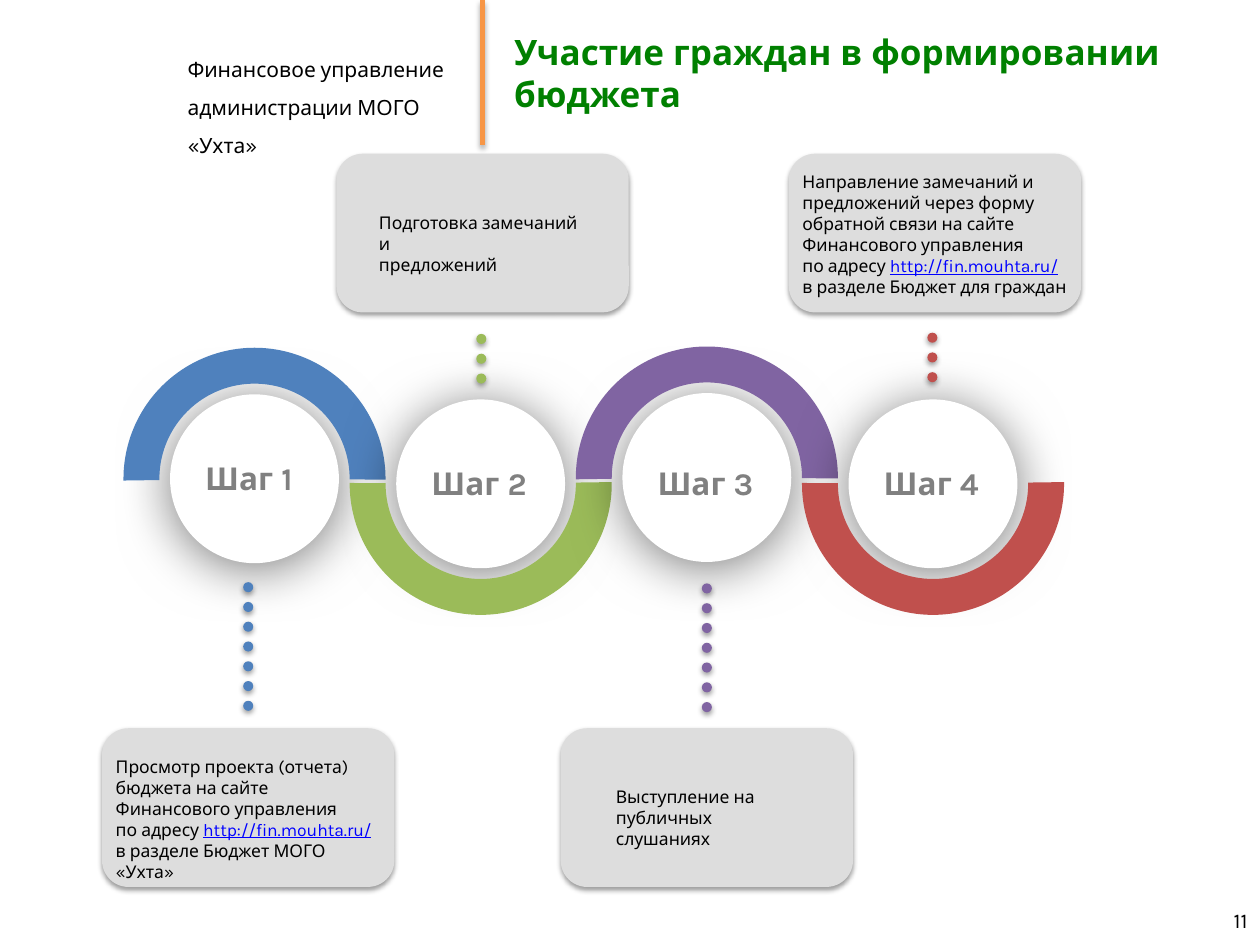
from lxml.etree import SubElement
from pptx import Presentation
from pptx.dml.color import RGBColor
from pptx.enum.shapes import MSO_CONNECTOR, MSO_SHAPE
from pptx.enum.text import MSO_ANCHOR, MSO_AUTO_SIZE, PP_ALIGN
from pptx.oxml.ns import qn
from pptx.util import Inches, Pt

FONT = "Karla"
HUES = {
    "text": "000000", "title": "008000", "link": "0000FF", "label": "808080",
    "card": "DDDDDD", "disc": "FFFFFF", "rule": "F79646",
    "blue": "4F81BD", "green": "9BBB59", "purple": "8064A2", "red": "C0504D",
}
LEFT, PITCH = 0.98, 1.795      # first column and column width of the steps
ARC, DISC, DOT, GAP = 2.08, 1.34, 0.08, 0.157
CARD = (2.32, 1.26)
URL = "http://fin.mouhta.ru/"

# hue, arc top, dots (left, top, count), card (left, top), text box, lines
STEPS = [
    ("blue", 2.76, (1.93, 4.62, 7), (0.81, 5.78), (0.82, 5.95, 2.31, 0.94),
     ["Просмотр проекта (отчета)", "бюджета на сайте",
      "Финансового управления", ("по адресу ", URL, " "),
      "в разделе Бюджет МОГО «Ухта»"]),
    ("green", 2.8, (3.78, 2.65, 3), (2.67, 1.22), (2.91, 1.63, 1.84, 0.44),
     ["Подготовка замечаний и", "предложений"]),
    ("purple", 2.75, (5.57, 4.63, 7), (4.45, 5.78), (4.79, 6.19, 1.64, 0.44),
     ["Выступление на", "публичных слушаниях"]),
    ("red", 2.8, (7.36, 2.64, 3), (6.26, 1.22), (6.27, 1.31, 2.3, 1.11),
     ["Направление замечаний и", "предложений через форму",
      "обратной связи на сайте", "Финансового управления",
      ("по адресу ", URL, " "), "в разделе Бюджет для граждан"]),
]


def color(name):
    return RGBColor.from_string(HUES[name])


def shade(shape, alpha, blur, dist):
    """Give the shape a soft black shadow that falls straight down."""
    props = shape._element.spPr
    list_ = props.find(qn("a:effectLst"))
    if list_ is None:
        list_ = SubElement(props, qn("a:effectLst"))
    outer = SubElement(list_, qn("a:outerShdw"), blurRad=str(Pt(blur)),
                       dist=str(Pt(dist)), dir="5400000", rotWithShape="0")
    tone = SubElement(outer, qn("a:srgbClr"), val="000000")
    SubElement(tone, qn("a:alpha"), val=str(alpha * 1000))


def add_form(slide, kind, box, hue, shadow=None):
    form = slide.shapes.add_shape(kind, *map(Inches, box))
    form.fill.solid()
    form.fill.fore_color.rgb = color(hue)
    form.line.fill.background()
    form.shadow.inherit = False
    if shadow:
        shade(form, *shadow)
    return form


def write(frame, lines, size, hue="text", bold=False, align=PP_ALIGN.LEFT,
          space=None):
    """Fill the frame; a line is a string or a tuple of runs."""
    frame.word_wrap = True
    for i, line in enumerate(lines):
        para = frame.add_paragraph() if i else frame.paragraphs[0]
        para.alignment = align
        if space:
            para.line_spacing = space
        for part in (line,) if isinstance(line, str) else line:
            run = para.add_run()
            run.text = part
            font = run.font
            font.name, font.size, font.bold = FONT, Pt(size), bold
            font.underline = part == URL
            font.color.rgb = color("link" if part == URL else hue)


def add_text(slide, box, lines, size, **style):
    frame = slide.shapes.add_textbox(*map(Inches, box)).text_frame
    write(frame, lines, size, **style)
    return frame


def add_head(slide):
    add_text(slide, (1.39, 0.3, 2.5, 0.66),
             ["Финансовое управление", "администрации МОГО «Ухта»"], 12,
             space=1.5)
    rule = slide.shapes.add_connector(
        MSO_CONNECTOR.STRAIGHT, Inches(3.83), 0, Inches(3.83), Inches(1.15))
    rule.line.color.rgb = color("rule")
    rule.line.width = Pt(3)
    shade(rule, 35, 3.1, 1.8)

    title = slide.shapes.title
    title.left, title.top = Inches(3.98), 0
    title.width, title.height = Inches(6.02), Inches(1.15)
    frame = title.text_frame
    frame.auto_size = MSO_AUTO_SIZE.NONE
    frame.vertical_anchor = MSO_ANCHOR.MIDDLE
    write(frame, ["Участие граждан в формировании бюджета"], 20,
          hue="title", bold=True)


def add_step(slide, col, hue, top, dots, card, box, lines):
    left = LEFT + col * PITCH
    inset = (ARC - DISC) / 2
    soft = (38, 3.1, 1.6)
    add_form(slide, MSO_SHAPE.OVAL, (left + inset, top + inset, DISC, DISC),
             "disc", (52, 31, 3))
    arc = add_form(slide, MSO_SHAPE.BLOCK_ARC, (left, top, ARC, ARC), hue)
    for i, value in enumerate((107.535, 0.228, 0.137)):
        arc.adjustments[i] = value
    arc.rotation = 180 * (col % 2)

    x, y, count = dots
    for i in range(count):
        add_form(slide, MSO_SHAPE.OVAL, (x, y + i * GAP, DOT, DOT), hue, soft)
    add_form(slide, MSO_SHAPE.ROUNDED_RECTANGLE, card + CARD, "card", soft)
    add_text(slide, (left + 0.55, 3.63 if col else 3.59, 0.99, 0.4),
             [f"Шаг {col + 1}"], 18, hue="label", bold=True)
    add_text(slide, box, lines, 10)


def main():
    deck = Presentation()
    deck.slide_width, deck.slide_height = Inches(10), Inches(7.5)
    slide = deck.slides.add_slide(deck.slide_layouts[5])
    add_head(slide)
    for col, step in enumerate(STEPS):
        add_step(slide, col, *step)
    page = add_text(slide, (7.67, 7.1, 2.33, 0.4), ["11"], 12,
                    align=PP_ALIGN.RIGHT)
    page.vertical_anchor = MSO_ANCHOR.MIDDLE
    deck.save("out.pptx")


if __name__ == "__main__":
    main()
